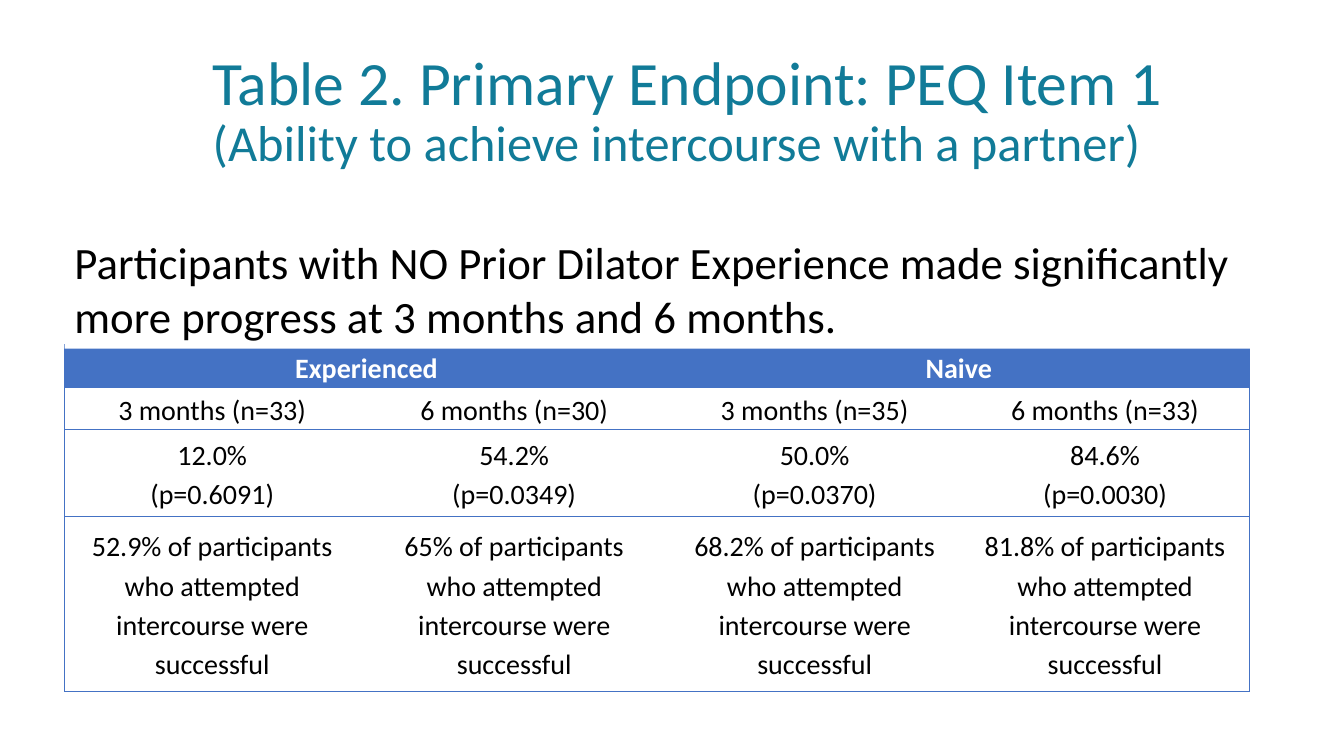
from lxml import etree
from pptx import Presentation
from pptx.dml.color import RGBColor
from pptx.enum.shapes import MSO_SHAPE
from pptx.enum.text import MSO_ANCHOR, PP_ALIGN
from pptx.oxml.ns import qn
from pptx.util import Inches, Pt

LEFT, CENTER = PP_ALIGN.LEFT, PP_ALIGN.CENTER
TOP, MIDDLE = MSO_ANCHOR.TOP, MSO_ANCHOR.MIDDLE
RECTANGLE = MSO_SHAPE.RECTANGLE
TITLE_ONLY = 5

FONT = "Calibri"
TEAL, BLUE, WHITE, BLACK = "117B98", "4472C4", "FFFFFF", "000000"

COLUMN_WIDTHS = [2.93, 3.06, 2.9, 2.86]
ROW_HEIGHTS = [0.42, 0.42, 0.86, 1.74]
OUTCOME = "who attempted intercourse were successful"
RESULTS = [
    ["Experienced", "", "Naive", ""],
    ["3 months (n=33)", "6 months (n=30)", "3 months (n=35)", "6 months (n=33)"],
    ["12.0%\n(p=0.6091)", "54.2%\n(p=0.0349)", "50.0%\n(p=0.0370)", "84.6%\n(p=0.0030)"],
    [f"52.9% of participants {OUTCOME}", f"65% of participants\n{OUTCOME}",
     f"68.2% of participants {OUTCOME}", f"81.8% of participants {OUTCOME}"],
]


def color(hex_value):
    return RGBColor.from_string(hex_value)


def apply(target, values):
    for name, value in values.items():
        setattr(target, name, value)


def style_font(font, size, hex_value, bold=False):
    apply(font, {"name": FONT, "size": Pt(size), "bold": bold})
    font.color.rgb = color(hex_value)


def fill_solid(target, hex_value):
    target.fill.solid()
    target.fill.fore_color.rgb = color(hex_value)


def place(shape, left, top, width, height):
    apply(shape, {"left": Inches(left), "top": Inches(top),
                  "width": Inches(width), "height": Inches(height)})


def set_borders(cell, visible_sides):
    """Draw the given sides in blue and hide the others; call before filling."""
    properties = cell._tc.get_or_add_tcPr()
    for side in "LRTB":
        line = etree.SubElement(properties, qn(f"a:ln{side}"), w=str(Pt(0.5)))
        if side in visible_sides:
            solid = etree.SubElement(line, qn("a:solidFill"))
            etree.SubElement(solid, qn("a:srgbClr"), val=BLUE)
        else:
            etree.SubElement(line, qn("a:noFill"))


def add_title(slide, lines):
    title = slide.shapes.title
    place(title, 2.01, 0.39, 11.32, 1.45)
    apply(title.text_frame, {"vertical_anchor": MIDDLE, "word_wrap": True})
    paragraph = title.text_frame.paragraphs[0]
    apply(paragraph, {"alignment": LEFT, "line_spacing": 0.9})
    for index, (text, size) in enumerate(lines):
        if index:
            paragraph.add_line_break()
        run = paragraph.add_run()
        run.text = text
        style_font(run.font, size, TEAL)


def fill_cell(cell, text, is_header):
    apply(cell, {"vertical_anchor": MIDDLE,
                 "margin_left": Inches(0.07), "margin_right": Inches(0.07),
                 "margin_top": 0, "margin_bottom": 0})
    fill_solid(cell, BLUE if is_header else WHITE)
    paragraph = cell.text_frame.paragraphs[0]
    paragraph.text = text
    apply(paragraph, {"alignment": CENTER, "line_spacing": 1.15, "space_after": Pt(8)})
    style_font(paragraph.font, 20, WHITE if is_header else BLACK, is_header)


def add_results_table(slide):
    rows, columns = len(ROW_HEIGHTS), len(COLUMN_WIDTHS)
    table = slide.shapes.add_table(rows, columns, Inches(0.64), Inches(3.42),
                                   Inches(sum(COLUMN_WIDTHS)),
                                   Inches(sum(ROW_HEIGHTS))).table
    apply(table, {"first_row": False, "horz_banding": False})
    for column, width in zip(table.columns, COLUMN_WIDTHS):
        column.width = Inches(width)
    for row, height in zip(table.rows, ROW_HEIGHTS):
        row.height = Inches(height)
    for first in (0, 2):
        table.cell(0, first).merge(table.cell(0, first + 1))
    for r, row_texts in enumerate(RESULTS):
        for c, text in enumerate(row_texts):
            cell = table.cell(r, c)
            outer = ("L" if c == 0 else "") + ("R" if c >= columns - 1 else "")
            if cell.is_merge_origin and c + cell.span_width == columns:
                outer += "R"
            set_borders(cell, "TB" + outer)
            fill_cell(cell, text, r == 0)


def add_finding(slide, text):
    finding = slide.shapes.add_shape(RECTANGLE, 0, 0, 0, 0)
    place(finding, 0.64, 2.28, 11.76, 1.18)
    finding.shadow.inherit = False
    fill_solid(finding, WHITE)
    finding.line.fill.background()
    apply(finding.text_frame, {"vertical_anchor": TOP, "word_wrap": True})
    paragraph = finding.text_frame.paragraphs[0]
    paragraph.text = text
    paragraph.alignment = LEFT
    style_font(paragraph.font, 32, BLACK)


def main():
    presentation = Presentation()
    apply(presentation, {"slide_width": Inches(13.33), "slide_height": Inches(7.5)})
    slide = presentation.slides.add_slide(presentation.slide_layouts[TITLE_ONLY])
    add_title(slide, [("Table 2. Primary Endpoint: PEQ Item 1", 44),
                      ("(Ability to achieve intercourse with a partner)", 36)])
    add_results_table(slide)
    add_finding(slide, "Participants with NO Prior Dilator Experience made significantly "
                       "more progress at 3 months and 6 months.")
    presentation.save("out.pptx")


if __name__ == "__main__":
    main()
